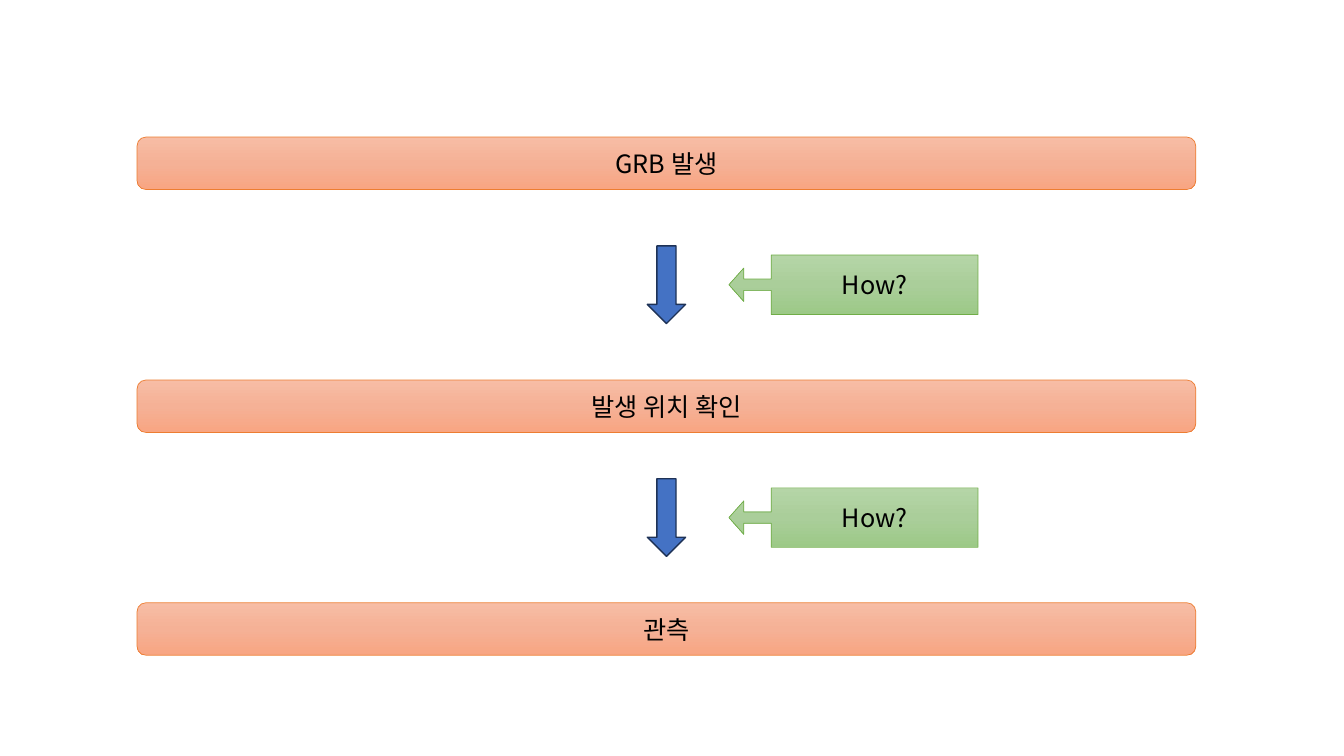
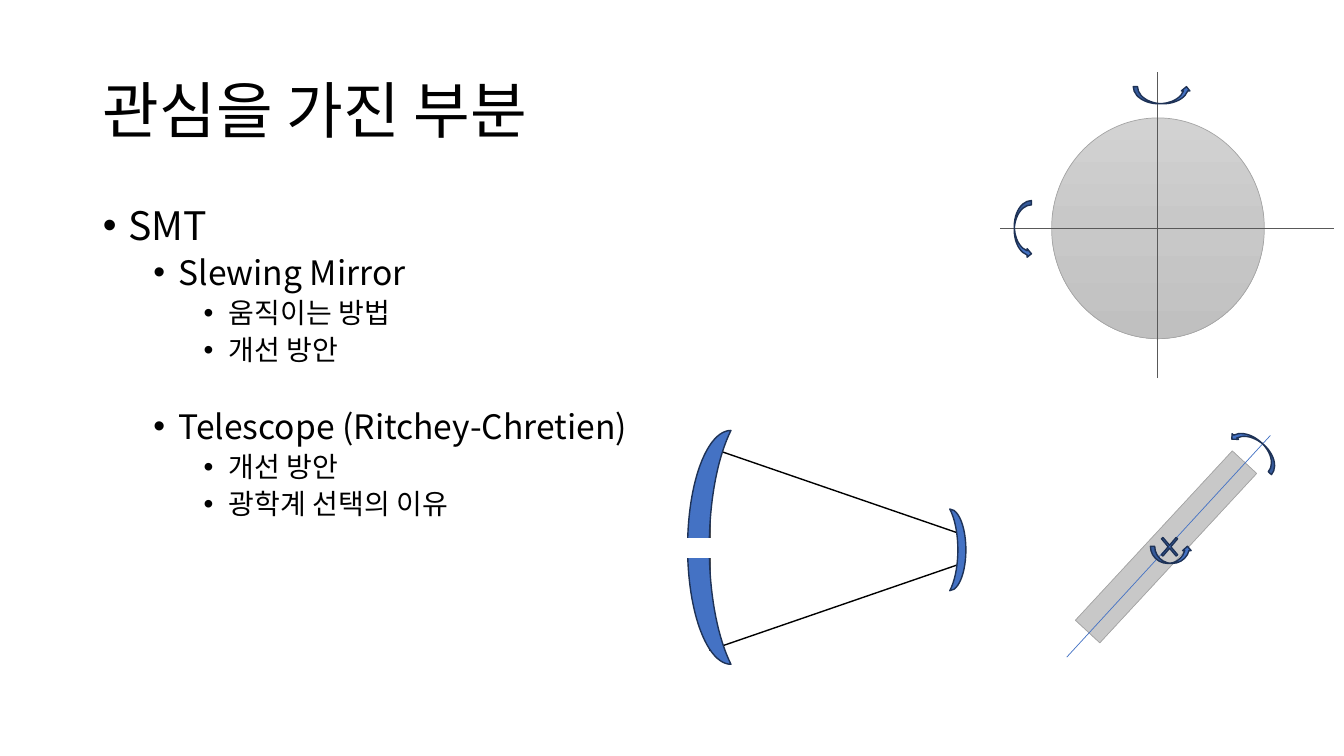
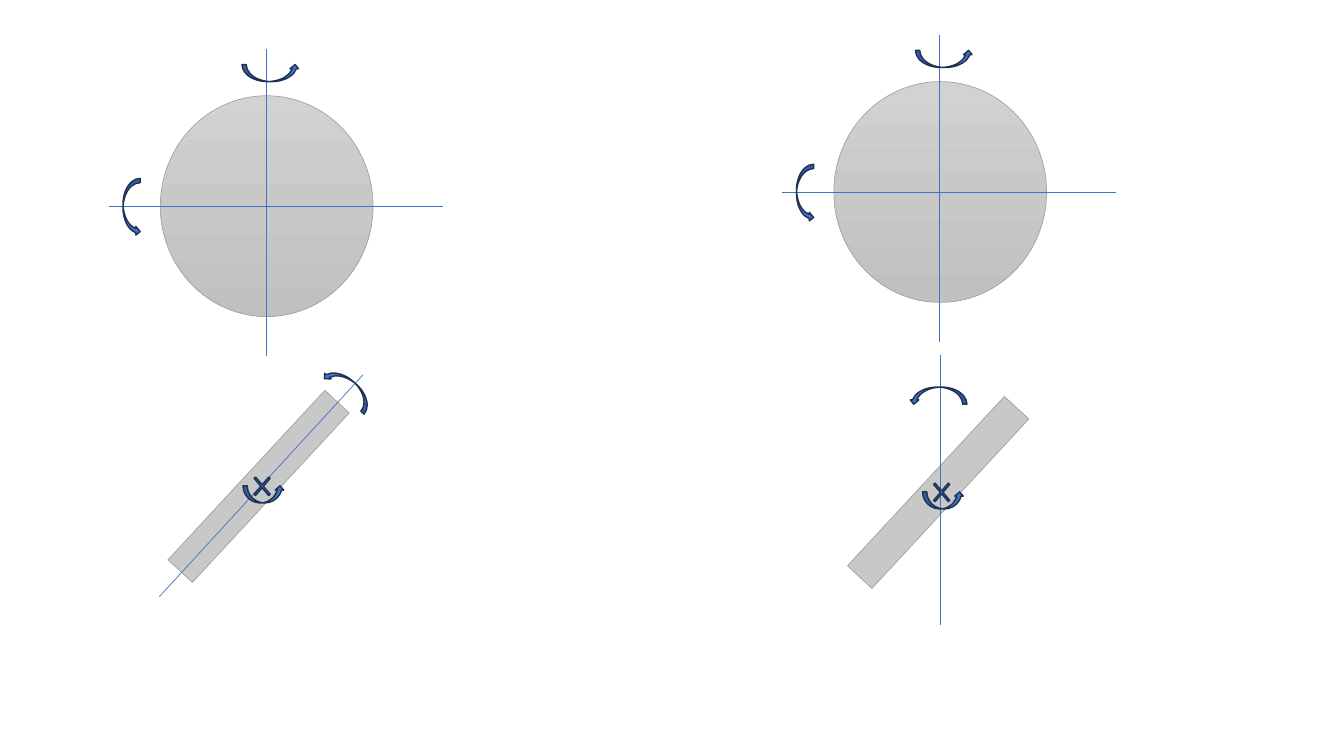
import copy

import pptx
import pptx.dml.color
import pptx.enum.shapes
import pptx.enum.text
import pptx.oxml
import pptx.oxml.ns
import pptx.util

SHAPE = pptx.enum.shapes.MSO_SHAPE
ALIGN = pptx.enum.text.PP_ALIGN
MIDDLE = pptx.enum.text.MSO_ANCHOR.MIDDLE
qn = pptx.oxml.ns.qn

FONT = "Noto Sans CJK KR"
BLACK, WHITE, BLUE, NAVY, AXIS_GREY = "000000", "FFFFFF", "4472C4", "1E3256", "595959"
# Each look is (fill, line colour, line width); a fill of three colours is a gradient.
SOLID = (BLUE, NAVY, 1)
ORANGE = (("F7BDA5", "F5B196", "F8A582"), "ED7D31", 0.5)
GREEN = (("B5D5A7", "AACE9A", "9CC987"), "70AD47", 0.5)
SILVER = (("D2D2D2", "C8C8C8", "C0C0C0"), "A5A5A5", 0.5)
LIGHT_CONE = (WHITE, BLACK, 1)
BLANK = (WHITE, WHITE, 1)

# One row per list level: text size, space before, left indent.
LEVELS = ((28, 10, 0.25), (24, 5, 0.75), (20, 5, 1.25))


def color(hex_string):
    return pptx.dml.color.RGBColor.from_string(hex_string)


def grid(*cells):
    """Turn columns and rows of the one-inch grid into lengths."""
    return [pptx.util.Inches(cell) for cell in cells]


def apply(target, values):
    for name, value in values.items():
        setattr(target, name, value)


class Deck:
    """The presentation, its style and the slide or group being drawn on."""

    def __init__(self, columns, rows):
        self.presentation = pptx.Presentation()
        width, height = grid(columns, rows)
        apply(self.presentation, {"slide_width": width, "slide_height": height})

    def new_slide(self, layout=6):
        layouts = self.presentation.slide_layouts
        self.slide = self.presentation.slides.add_slide(layouts[layout])
        self.shapes = self.slide.shapes

    def new_group(self):
        self.shapes = self.slide.shapes.add_group_shape().shapes

    def add_text(self, paragraph, text, size, **values):
        apply(paragraph, values)
        run = paragraph.add_run()
        run.text = text
        apply(run.font, {"name": FONT, "size": pptx.util.Pt(size)})
        run.font.color.rgb = color(BLACK)
        latin = run._r.rPr.find(qn("a:latin"))
        latin.addnext(latin.makeelement(qn("a:ea"), {"typeface": FONT}))

    def placeholder(self, index, box):
        placeholder = self.slide.placeholders[index]
        apply(placeholder, dict(zip(("left", "top", "width", "height"), grid(*box))))
        return placeholder.text_frame

    def title(self, text, box):
        frame = self.placeholder(0, box)
        frame.vertical_anchor = MIDDLE
        self.add_text(frame.paragraphs[0], text, 44, alignment=ALIGN.LEFT, line_spacing=0.9)

    def bullets(self, items, box):
        """Fill the body with a list of (level, text, extra space before) items."""
        frame = self.placeholder(1, box)
        for number, (level, text, extra) in enumerate(items):
            paragraph = frame.add_paragraph() if number else frame.paragraphs[0]
            size, before, indent = LEVELS[level]
            self.add_text(paragraph, text, size, level=level, line_spacing=0.9,
                          space_before=pptx.util.Pt(before + extra))
            properties = paragraph._element.get_or_add_pPr()
            left, hanging = grid(indent, -0.25)
            properties.set("marL", str(left))
            properties.set("indent", str(hanging))
            for tag, name, value in (("a:buFont", "typeface", "Arial"),
                                     ("a:buChar", "char", "•")):
                properties.append(properties.makeelement(qn(tag), {name: value}))

    def paint(self, shape, look):
        fill, line, width = look
        if isinstance(fill, str):
            shape.fill.solid()
            shape.fill.fore_color.rgb = color(fill)
        else:
            shape.fill.gradient()
            shape.fill.gradient_angle = 270
            first = shape._element.spPr.find(".//" + qn("a:gs"))
            first.addnext(copy.deepcopy(first))
            for stop, hex_string, position in zip(shape.fill.gradient_stops, fill, (0, 0.5, 1)):
                stop.color.rgb = color(hex_string)
                stop.position = position
        shape.line.color.rgb = color(line)
        shape.line.width = pptx.util.Pt(width)

    def shape(self, kind, box, look=SOLID, rotation=0, adjustments=(), text=""):
        shape = self.shapes.add_shape(kind, *grid(*box))
        shape.shadow.inherit = False
        shape.rotation = rotation
        for index, value in enumerate(adjustments):
            shape.adjustments[index] = value
        self.paint(shape, look)
        if text:
            shape.text_frame.vertical_anchor = MIDDLE
            self.add_text(shape.text_frame.paragraphs[0], text, 18, alignment=ALIGN.CENTER)

    def axis(self, start, end, line=BLUE):
        straight = pptx.enum.shapes.MSO_CONNECTOR.STRAIGHT
        connector = self.shapes.add_connector(straight, *grid(*start, *end))
        connector.line.color.rgb = color(line)
        connector.line.width = pptx.util.Pt(0.5)
        properties = connector._element.spPr
        properties.append(properties.makeelement(qn("a:effectLst"), {}))

    def turn_arrow(self, x, y, rotation=0, width=0.57):
        self.shape(SHAPE.CURVED_UP_ARROW, (x, y, width, 0.17), rotation=rotation)

    def mirror_front(self, x, y, line=BLUE):
        """Round mirror centred at x, y with its two turning axes."""
        self.new_group()
        self.shape(SHAPE.OVAL, (x - 1.05, y - 1.1, 2.11, 2.19), SILVER)
        self.axis((x, y + 1.48), (x, y - 1.56), line)
        self.axis((x - 1.56, y), (x + 1.75, y), line)
        self.turn_arrow(x - 0.24, y - 1.41)
        self.turn_arrow(x - 1.62, y - 0.08, 90)

    def mirror_side(self, x, y, upright_axis=False):
        """Tilted mirror centred at x, y, turning about its own or an upright axis."""
        self.new_group()
        self.shape(SHAPE.RECTANGLE, (x - 1.15, y - 0.16, 2.29, 0.33), SILVER, 312.8)
        if upright_axis:
            self.axis((x + 0.02, y - 1.36), (x + 0.02, y + 1.32))
            self.turn_arrow(x - 0.29, y - 1.04, 180)
        else:
            self.axis((x + 1.03, y - 1.1), (x - 0.99, y + 1.1))
            self.turn_arrow(x + 0.6, y - 1.05, 221.8)
        self.shape(SHAPE.MATH_MULTIPLY, (x - 0.11, y - 0.16, 0.28, 0.33), adjustments=(0.07,))
        self.turn_arrow(x - 0.16, y, width=0.41)

    def telescope(self):
        self.new_group()
        self.shape(SHAPE.TRAPEZOID, (7.29, 4.19, 2.01, 2.51), LIGHT_CONE, 90, (0.43,))
        self.shape(SHAPE.MOON, (6.82, 4.27, 0.43, 2.32))
        self.shape(SHAPE.MOON, (9.42, 5.05, 0.16, 0.81), rotation=180)
        self.shape(SHAPE.RECTANGLE, (6.73, 5.34, 0.43, 0.19), BLANK)


def observation_steps(deck):
    deck.new_slide()
    for top, step in ((1.36, "GRB 발생"), (3.77, "발생 위치 확인"), (5.98, "관측")):
        deck.shape(SHAPE.ROUNDED_RECTANGLE, (1.36, top, 10.5, 0.52), ORANGE, text=step)
    for top in (2.44, 4.75):
        deck.shape(SHAPE.DOWN_ARROW, (6.42, top, 0.38, 0.77))
        deck.shape(SHAPE.LEFT_ARROW_CALLOUT, (7.23, top + 0.09, 2.47, 0.59), GREEN,
                   adjustments=(0.19, 0.28, 0.25, 0.83), text="How?")


def topics_of_interest(deck):
    deck.new_slide(layout=1)
    deck.title("관심을 가진 부분", (0.92, 0.4, 11.5, 1.45))
    deck.bullets((
        (0, "SMT", 0),
        (1, "Slewing Mirror", 0),
        (2, "움직이는 방법", 0),
        (2, "개선 방안", 0),
        (1, "Telescope (Ritchey-Chretien)", 26),
        (2, "개선 방안", 0),
        (2, "광학계 선택의 이유", 0),
    ), (0.92, 2, 11.5, 4.76))
    deck.mirror_front(11.48, 2.27, AXIS_GREY)
    deck.mirror_side(11.57, 5.42)
    deck.telescope()


def mirror_axes(deck):
    deck.new_slide()
    deck.mirror_front(2.64, 2.05)
    deck.mirror_side(2.57, 4.82)
    deck.mirror_front(9.32, 1.91)
    deck.mirror_side(9.31, 4.88, upright_axis=True)


def main():
    deck = Deck(13.33, 7.5)
    for build in (observation_steps, topics_of_interest, mirror_axes):
        build(deck)
    deck.presentation.save("out.pptx")


if __name__ == "__main__":
    main()
